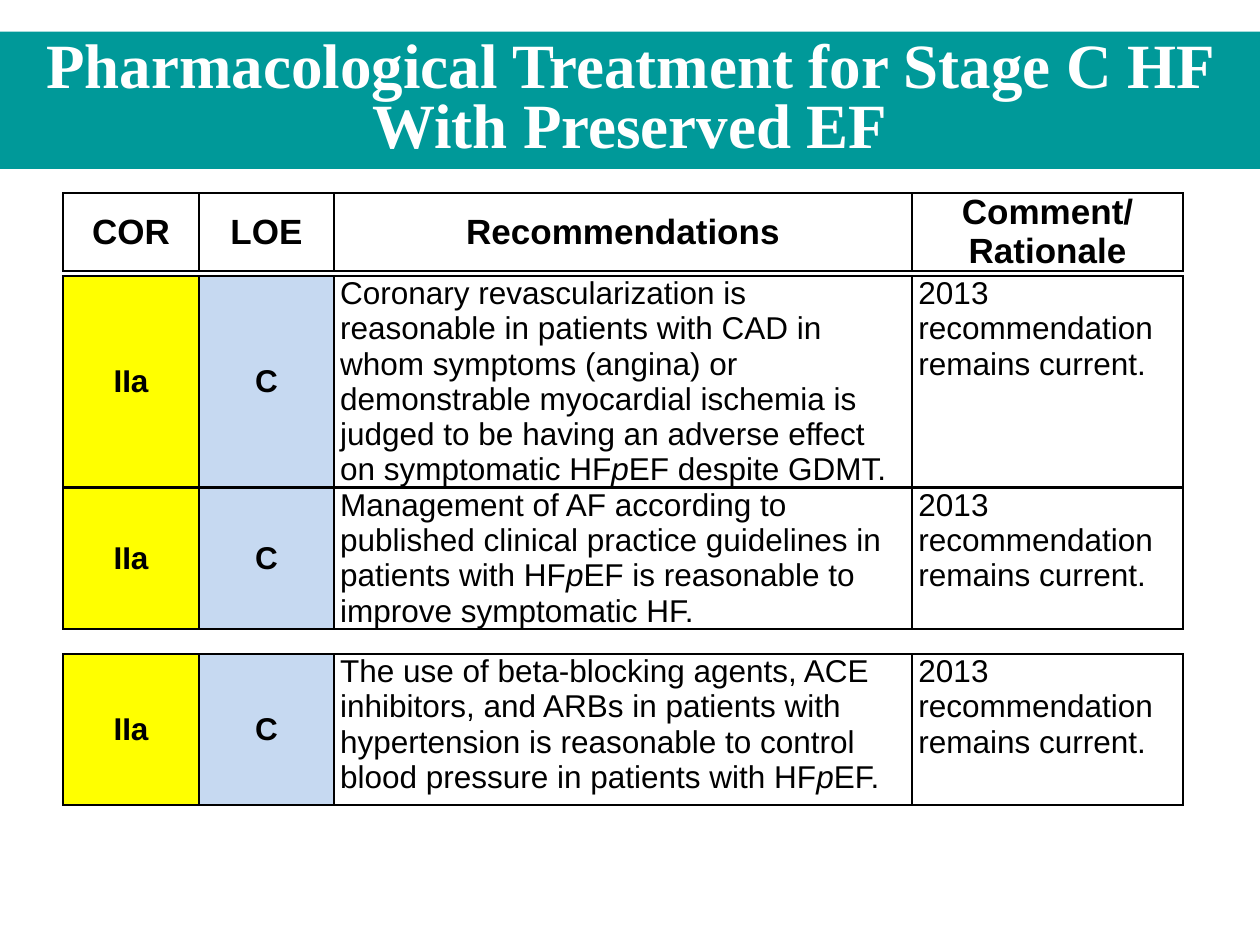
from lxml.etree import SubElement
from pptx import Presentation
from pptx.dml.color import RGBColor
from pptx.enum.text import MSO_ANCHOR as ANCHOR, MSO_AUTO_SIZE as FIT, PP_ALIGN as ALIGN
from pptx.oxml.ns import qn
from pptx.util import Inches, Pt

# Content: *...* marks italics
TITLE = "Pharmacological Treatment for Stage C HF With Preserved EF"
HEADER = ["COR", "LOE", "Recommendations", "Comment/\nRationale"]
CURRENT = "2013 recommendation remains current."
REVASCULARIZATION = ["IIa", "C", "Coronary revascularization is reasonable in patients with CAD in "
                     "whom symptoms (angina) or demonstrable myocardial ischemia is judged to be "
                     "having an adverse effect on symptomatic HF*p*EF despite GDMT.", CURRENT]
AF = ["IIa", "C", "Management of AF according to published clinical practice guidelines in "
      "patients with HF*p*EF is reasonable to improve symptomatic HF.", CURRENT]
HYPERTENSION = ["IIa", "C", "The use of beta-blocking agents, ACE inhibitors, and ARBs in patients "
                "with hypertension is reasonable to control blood pressure in patients with "
                "HF*p*EF.", CURRENT]

COLORS = {"band": "009999", "title": "FFFFFF", "text": "000000", "line": "000000",
          "cor": "FFFF00", "loe": "C6D9F1"}
LEFT = 0.5
COLS = [1.08, 1.07, 4.59, 2.15]
HEAD_STYLE = {"size": 20, "margin": 0.07, "bold": 4, "fills": {}}
BODY_STYLE = {"size": 18, "margin": 0.05, "bold": 2, "fills": {0: "cor", 1: "loe"}}

# Tables: top, rows, row heights, style
TABLES = [
    (2.19, [REVASCULARIZATION, AF], [1.68, 1.12], BODY_STYLE),
    (1.53, [HEADER], [0.62], HEAD_STYLE),
    (5.19, [HYPERTENSION], [1.2], BODY_STYLE),
]


def rgb(name):
    return RGBColor.from_string(COLORS[name])


def set_font(font, **values):
    for key, value in values.items():
        setattr(font, key, value)


def set_borders(cell, widths):
    tc_pr = cell._tc.get_or_add_tcPr()
    for side, width in widths.items():
        ln = SubElement(tc_pr, qn(f"a:ln{side}"), w=str(Pt(width)))
        fill = SubElement(ln, qn("a:solidFill"))
        SubElement(fill, qn("a:srgbClr"), val=COLORS["line"])


def fill_cell(cell, text, col, style):
    centered = col < style["bold"]
    cell.margin_left = cell.margin_right = Inches(style["margin"])
    cell.margin_top = cell.margin_bottom = 0
    cell.vertical_anchor = ANCHOR.MIDDLE if centered else ANCHOR.TOP
    if col in style["fills"]:
        cell.fill.solid()
        cell.fill.fore_color.rgb = rgb(style["fills"][col])
    else:
        cell.fill.background()
    tf = cell.text_frame
    for n, line in enumerate(text.split("\n")):
        p = tf.add_paragraph() if n else tf.paragraphs[0]
        p.alignment = ALIGN.CENTER if centered else ALIGN.LEFT
        for i, part in enumerate(line.split("*")):
            r = p.add_run()
            r.text = part
            set_font(r.font, name="Arial", size=Pt(style["size"]), bold=centered,
                     italic=i % 2 == 1)
            r.font.color.rgb = rgb("text")


def add_grid(s, top, rows, heights, style):
    frame = s.shapes.add_table(len(rows), len(COLS), Inches(LEFT), Inches(top),
                               Inches(sum(COLS)), Inches(sum(heights)))
    table = frame.table
    table.first_row = table.horz_banding = False
    for column, width in zip(table.columns, COLS):
        column.width = Inches(width)
    for i, (texts, height) in enumerate(zip(rows, heights)):
        table.rows[i].height = Inches(height)
        widths = {"L": 1, "R": 1, "T": 1.5 if i else 1,
                  "B": 1.5 if i < len(rows) - 1 else 1}
        for col, text in enumerate(texts):
            cell = table.cell(i, col)
            set_borders(cell, widths)
            fill_cell(cell, text, col, style)


def add_title(s):
    sp = s.shapes.title
    sp.left, sp.top, sp.width, sp.height = 0, Inches(0.25), prs.slide_width, Inches(1.09)
    sp.fill.solid()
    sp.fill.fore_color.rgb = rgb("band")
    tf = sp.text_frame
    tf.word_wrap, tf.auto_size, tf.vertical_anchor = True, FIT.NONE, ANCHOR.MIDDLE
    p = tf.paragraphs[0]
    p.alignment, p.line_spacing = ALIGN.CENTER, 0.8
    r = p.add_run()
    r.text = TITLE
    set_font(r.font, name="Times New Roman", size=Pt(36), bold=True)
    r.font.color.rgb = rgb("title")


prs = Presentation()
prs.slide_width, prs.slide_height = Inches(10), Inches(7.5)
slide = prs.slides.add_slide(prs.slide_layouts[5])
add_title(slide)
for grid in TABLES:
    add_grid(slide, *grid)
prs.save("out.pptx")
